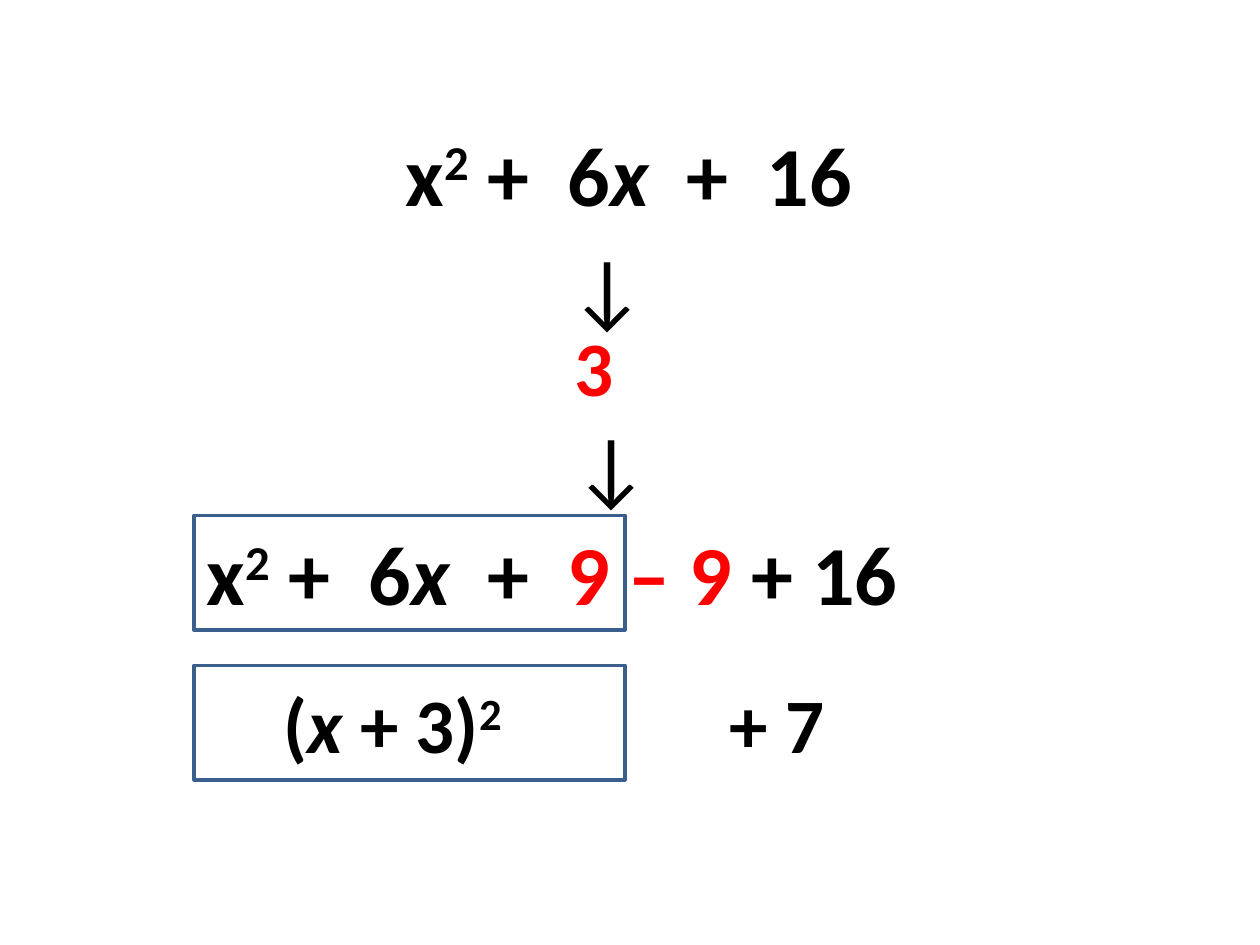
from pptx import Presentation
from pptx.dml.color import RGBColor
from pptx.enum.shapes import MSO_SHAPE
from pptx.enum.text import MSO_AUTO_SIZE
from pptx.util import Inches, Pt

COLORS = {"text": "000000", "accent": "FF0000", "frame": "3A5F8C"}
FRAME_LEFT, FRAME_WIDTH, ROW_HEIGHT = 1.54, 3.42, 0.91
SQUARED_X = [("x", ""), ("2", "super"), (" +  6", ""), ("x", "italic")]


def rgb(name):
    return RGBColor.from_string(COLORS[name])


def add_expression(s, left, top, width, height, runs, size=48, bold=True, wrap=False):
    """Add one line of maths; each run is (text, "" | "super" | "italic" | "accent")."""
    box = s.shapes.add_textbox(Inches(left), Inches(top), Inches(width), Inches(height))
    tf = box.text_frame
    tf.word_wrap = wrap
    tf.auto_size = MSO_AUTO_SIZE.SHAPE_TO_FIT_TEXT
    p = tf.paragraphs[0]
    p.font.name = "Calibri"
    p.font.size = Pt(size)
    p.font.bold = bold
    for text, style in runs:
        r = p.add_run()
        r.text = text
        r.font.color.rgb = rgb("accent" if style == "accent" else "text")
        if style == "italic":
            r.font.italic = True
        elif style == "super":
            r.font._element.set("baseline", "30000")


def add_arrow(s, left, top):
    add_expression(s, left, top, 0.61, ROW_HEIGHT, [("↓", "")], bold=False)


def add_frame(s, top):
    frame = s.shapes.add_shape(MSO_SHAPE.RECTANGLE, Inches(FRAME_LEFT), Inches(top),
                               Inches(FRAME_WIDTH), Inches(ROW_HEIGHT))
    frame.shadow.inherit = False
    frame.fill.background()
    frame.line.color.rgb = rgb("frame")
    frame.line.width = Pt(2)


def main():
    prs = Presentation()
    prs.slide_width, prs.slide_height = Inches(10), Inches(7.5)
    s = prs.slides.add_slide(prs.slide_layouts[6])

    add_expression(s, 3.12, 0.92, 3.81, ROW_HEIGHT, SQUARED_X + [("  +  16", "")])
    add_arrow(s, 4.42, 1.82)
    add_expression(s, 4.46, 2.49, 0.51, 0.84, [("3", "accent")], size=44)

    add_expression(s, FRAME_LEFT, 4.09, 5.77, ROW_HEIGHT,
                   SQUARED_X + [("  +  ", ""), ("9 – 9 ", "accent"), ("+ 16", "")])
    add_frame(s, 4.09)

    add_expression(s, 2.15, 5.32, 2.19, 0.84,
                   [("(", ""), ("x", "italic"), (" + 3)", ""), ("2", "super")],
                   size=44, wrap=True)
    add_frame(s, 5.28)
    add_expression(s, 5.69, 5.32, 0.96, 0.84, [("+ 7", "")], size=44)
    add_arrow(s, 4.45, 3.23)

    prs.save("out.pptx")


if __name__ == "__main__":
    main()
